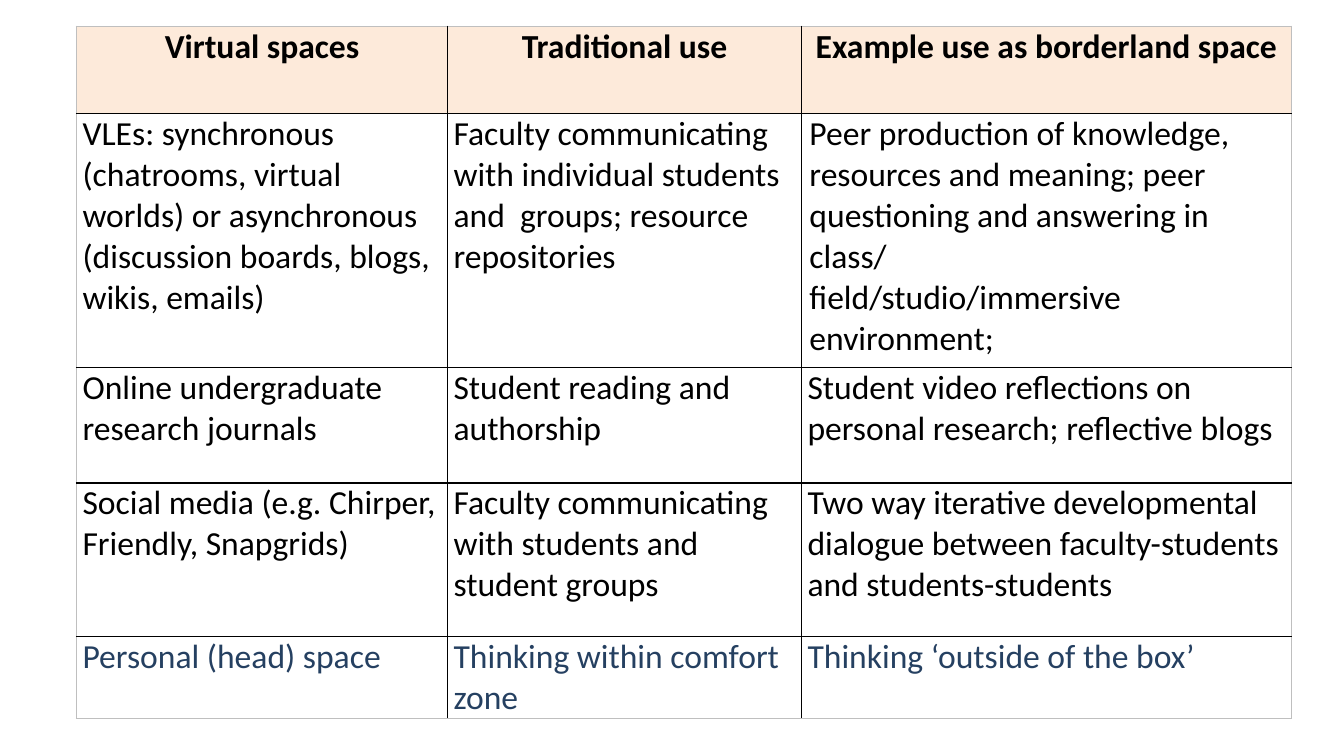
from dataclasses import dataclass

from lxml.etree import SubElement
from pptx import Presentation
from pptx.dml.color import RGBColor
from pptx.enum.text import MSO_ANCHOR, PP_ALIGN
from pptx.oxml.ns import qn
from pptx.util import Cm, Pt


@dataclass(frozen=True)
class Theme:
    font: str = "Calibri"
    size: int = 24
    text: str = "000000"
    accent: str = "254061"
    header_fill: str = "FDEADA"
    inner_line: str = "000000"
    outer_line: str = "BFBFBF"
    line_width: float = 1


THEME = Theme()

COLUMN_WIDTHS = [9.35, 8.92, 12.34]
ROW_HEIGHTS = [2.21, 6.4, 2.9, 3.86, 1.96]
ROWS = [
    ["Virtual spaces", "Traditional use", "Example use as borderland space"],
    [
        "VLEs: synchronous (chatrooms, virtual worlds) or asynchronous "
        "(discussion boards, blogs, wikis, emails)",
        "Faculty communicating with individual students and  groups; resource repositories",
        "Peer production of knowledge, resources and meaning; peer questioning "
        "and answering in class/\nfield/studio/immersive environment;",
    ],
    [
        "Online undergraduate research journals",
        "Student reading and authorship",
        "Student video reflections on personal research; reflective blogs",
    ],
    [
        "Social media (e.g. Chirper, Friendly, Snapgrids)",
        "Faculty communicating with students and student groups",
        "Two way iterative developmental dialogue between faculty-students "
        "and students-students",
    ],
    ["Personal (head) space", "Thinking within comfort zone", "Thinking ‘outside of the box’"],
]
LAST_ROW = len(ROWS) - 1
LAST_COLUMN = len(COLUMN_WIDTHS) - 1


def set_borders(cell, row, column):
    """Draw the table's outline lighter than its inner lines."""
    outer_edges = {
        "a:lnL": column == 0,
        "a:lnR": column == LAST_COLUMN,
        "a:lnT": row == 0,
        "a:lnB": row == LAST_ROW,
    }
    properties = cell._tc.get_or_add_tcPr()
    for tag, is_outer in outer_edges.items():
        line = SubElement(properties, qn(tag), w=str(Pt(THEME.line_width)))
        fill = SubElement(line, qn("a:solidFill"))
        color = THEME.outer_line if is_outer else THEME.inner_line
        SubElement(fill, qn("a:srgbClr"), val=color)


def set_text(cell, text, is_header, color):
    cell.text = text
    cell.vertical_anchor = MSO_ANCHOR.TOP
    cell.margin_left = cell.margin_right = Cm(0.15)
    cell.margin_top = cell.margin_bottom = 0
    paragraphs = cell.text_frame.paragraphs
    for paragraph in paragraphs:
        paragraph.alignment = PP_ALIGN.CENTER if is_header else PP_ALIGN.LEFT
        paragraph.font.name = THEME.font
        paragraph.font.size = Pt(THEME.size)
        paragraph.font.bold = is_header
        paragraph.font.color.rgb = RGBColor.from_string(color)
        # The two-part entry is slightly indented
        if len(paragraphs) > 1:
            paragraph._p.get_or_add_pPr().set("marL", str(Cm(0.05)))


def format_cell(cell, row, column):
    is_header = row == 0
    set_borders(cell, row, column)
    if is_header:
        cell.fill.solid()
        cell.fill.fore_color.rgb = RGBColor.from_string(THEME.header_fill)
    else:
        cell.fill.background()
    color = THEME.accent if row == LAST_ROW else THEME.text
    set_text(cell, ROWS[row][column], is_header, color)


def add_spaces_table(slide):
    table = slide.shapes.add_table(
        len(ROWS), len(COLUMN_WIDTHS), Cm(1.93), Cm(0.66),
        Cm(sum(COLUMN_WIDTHS)), Cm(sum(ROW_HEIGHTS)),
    ).table
    table.first_row = False
    table.horz_banding = False

    # Column and row sizes
    for column, width in zip(table.columns, COLUMN_WIDTHS):
        column.width = Cm(width)
    for row, height in zip(table.rows, ROW_HEIGHTS):
        row.height = Cm(height)

    # Cell contents
    for row in range(len(ROWS)):
        for column in range(len(COLUMN_WIDTHS)):
            format_cell(table.cell(row, column), row, column)


def main():
    presentation = Presentation()
    presentation.slide_width = Cm(33.87)
    presentation.slide_height = Cm(19.05)
    slide = presentation.slides.add_slide(presentation.slide_layouts[6])
    add_spaces_table(slide)
    presentation.save("out.pptx")


if __name__ == "__main__":
    main()
